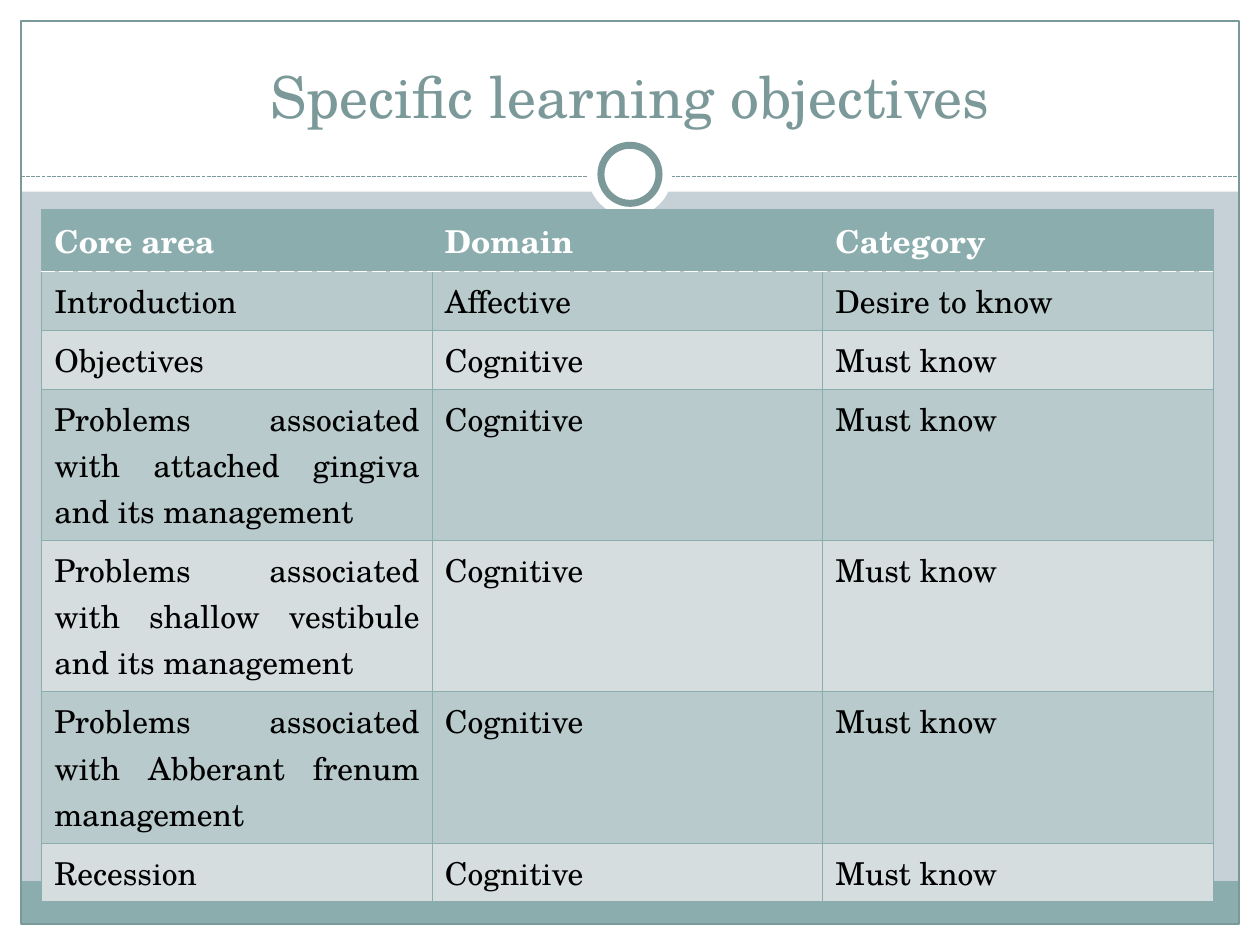
from lxml.etree import SubElement
from pptx import Presentation
from pptx.dml.color import RGBColor
from pptx.enum.dml import MSO_LINE
from pptx.enum.shapes import MSO_CONNECTOR, MSO_SHAPE
from pptx.enum.text import MSO_ANCHOR, PP_ALIGN
from pptx.oxml.ns import qn
from pptx.util import Pt

COLORS = {
    "backdrop": "C5D1D7",
    "white": "FFFFFF",
    "black": "000000",
    "teal": "8CADAE",
    "slate": "7C999A",
    "dark_band": "B8CACB",
    "light_band": "D5DDDE",
}
FONT = "TeX Gyre Schola"
WIDTH, HEIGHT = 720, 540
MARGIN = 12

HEADINGS = ("Core area", "Domain", "Category")
OBJECTIVES = (
    ("Introduction", "Affective", "Desire to know"),
    ("Objectives", "Cognitive", "Must know"),
    ("Problems associated with attached gingiva and its management",
     "Cognitive", "Must know"),
    ("Problems associated with shallow vestibule and its management",
     "Cognitive", "Must know"),
    ("Problems associated with Abberant frenum management",
     "Cognitive", "Must know"),
    ("Recession", "Cognitive", "Must know"),
)


def color(name):
    return RGBColor.from_string(COLORS[name])


def write(frame, text, size=18, ink="black", bold=False, align=PP_ALIGN.LEFT):
    para = frame.paragraphs[0]
    para.alignment = align
    span = para.add_run()
    span.text = text
    span.font.name = FONT
    span.font.size = Pt(size)
    span.font.bold = bold
    span.font.color.rgb = color(ink)


def set_border(cell, side, ink, width=0.75, dash="solid"):
    """Side is L, R, T or B; call before the cell is filled."""
    line = SubElement(cell._tc.get_or_add_tcPr(), qn(f"a:ln{side}"), w=str(Pt(width)))
    fill = SubElement(line, qn("a:solidFill"))
    SubElement(fill, qn("a:srgbClr"), val=COLORS[ink])
    SubElement(line, qn("a:prstDash"), val=dash)


class SlideBuilder:
    def __init__(self, deck):
        self.page = deck.slides.add_slide(deck.slide_layouts[5])
        background = self.page.background.fill
        background.solid()
        background.fore_color.rgb = color("backdrop")

    def shape(self, kind, left, top, width, height, fill=None, line=None, weight=0.75):
        shape = self.page.shapes.add_shape(
            kind, Pt(left), Pt(top), Pt(width), Pt(height))
        shape.shadow.inherit = False
        if fill:
            shape.fill.solid()
            shape.fill.fore_color.rgb = color(fill)
        else:
            shape.fill.background()
        if line:
            shape.line.color.rgb = color(line)
            shape.line.width = Pt(weight)
        else:
            shape.line.fill.background()

    def dashed_rule(self, left, right, top):
        rule = self.page.shapes.add_connector(
            MSO_CONNECTOR.STRAIGHT, Pt(left), Pt(top), Pt(right), Pt(top))
        rule.line.color.rgb = color("slate")
        rule.line.width = Pt(0.75)
        rule.line.dash_style = MSO_LINE.SQUARE_DOT
        SubElement(rule._element.spPr, qn("a:effectLst"))

    def title(self, text, left, top, width, height):
        title = self.page.shapes.title
        title.left, title.top = Pt(left), Pt(top)
        title.width, title.height = Pt(width), Pt(height)
        title.text_frame.vertical_anchor = MSO_ANCHOR.BOTTOM
        write(title.text_frame, text, size=33, ink="slate", align=PP_ALIGN.CENTER)
        # Bring the title in front of the white header panel.
        title.element.getparent().append(title.element)

    def table(self, rows, left, top, width, row_height):
        columns = len(rows[0])
        table = self.page.shapes.add_table(
            len(rows), columns, Pt(left), Pt(top),
            Pt(width), Pt(row_height * len(rows))).table
        for column in table.columns:
            column.width = Pt(width / columns)
        for r, texts in enumerate(rows):
            header = r == 0
            band = "teal" if header else "dark_band" if r % 2 else "light_band"
            for c, text in enumerate(texts):
                cell = table.cell(r, c)
                for side in "LRTB":
                    if (r, side) in ((0, "B"), (1, "T")):
                        set_border(cell, side, "white", 0.9, "sysDash")
                    else:
                        set_border(cell, side, "teal")
                cell.fill.solid()
                cell.fill.fore_color.rgb = color(band)
                justified = c == 0 and not header
                write(cell.text_frame, text, bold=header,
                      ink="white" if header else "black",
                      align=PP_ALIGN.JUSTIFY if justified else PP_ALIGN.LEFT)


def main():
    deck = Presentation()
    deck.slide_width, deck.slide_height = Pt(WIDTH), Pt(HEIGHT)
    slide = SlideBuilder(deck)
    rect, ellipse = MSO_SHAPE.RECTANGLE, MSO_SHAPE.OVAL
    inner_width, inner_height = WIDTH - 2 * MARGIN, HEIGHT - 2 * MARGIN

    for panel in ((0, HEIGHT - MARGIN, WIDTH, MARGIN),
                  (0, 0, WIDTH, 109.5),
                  (0, 0, MARGIN, HEIGHT),
                  (WIDTH - MARGIN, 0, MARGIN, HEIGHT)):
        slide.shape(rect, *panel, fill="white")
    slide.shape(rect, MARGIN, 503.5, inner_width, 24.5, fill="teal")
    slide.shape(rect, MARGIN, MARGIN, inner_width, inner_height, line="slate")
    slide.dashed_rule(MARGIN, WIDTH - MARGIN, 100.8)
    slide.shape(ellipse, 336, 75.6, 48, 48, fill="white")
    slide.shape(ellipse, 343.4, 83, 33.2, 33.2, fill="white", line="slate", weight=4)

    slide.title("Specific learning objectives", 24, 18, 672, 60)
    slide.table((HEADINGS, *OBJECTIVES), 23.8, 120, 669.6, 29.5)
    deck.save("out.pptx")


if __name__ == "__main__":
    main()
